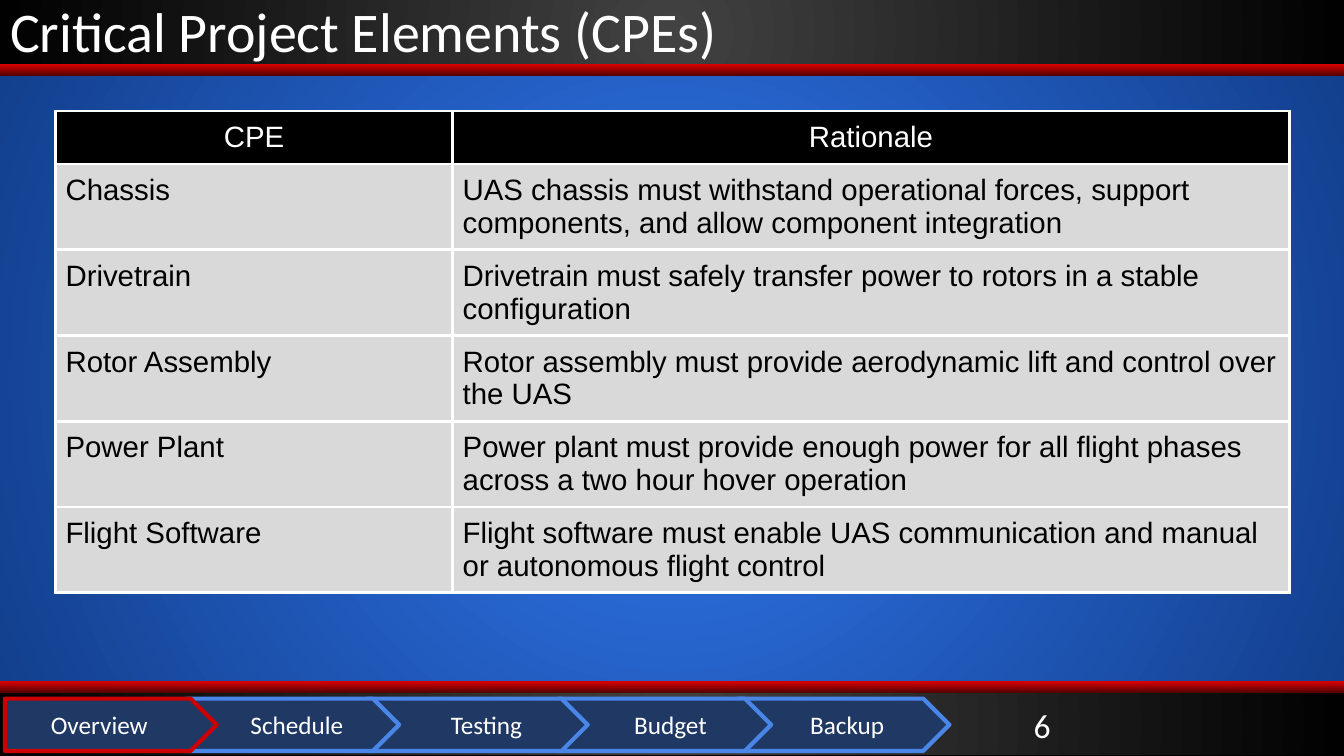
from lxml import etree
from pptx import Presentation
from pptx.dml.color import RGBColor
from pptx.enum import shapes, text
from pptx.oxml import ns
from pptx.util import Pt

TITLE = "Critical Project Elements (CPEs)"
SLIDE_NUMBER = "6"
ROWS = [
    ("CPE", "Rationale"),
    ("Chassis", "UAS chassis must withstand operational forces, support components, "
                "and allow component integration"),
    ("Drivetrain", "Drivetrain must safely transfer power to rotors in a stable configuration"),
    ("Rotor Assembly", "Rotor assembly must provide aerodynamic lift and control over the UAS"),
    ("Power Plant", "Power plant must provide enough power for all flight phases "
                    "across a two hour hover operation"),
    ("Flight Software", "Flight software must enable UAS communication and manual "
                        "or autonomous flight control"),
]
# label, left, width, left inset
SECTIONS = [
    ("Overview", 3.6, 151.2, 0),
    ("Schedule", 133.9, 151.2, 21.6),
    ("Testing", 262.8, 157, 28.8),
    ("Budget", 399.6, 151.2, 24),
    ("Backup", 527, 151.2, 21.6),
]
CURRENT_SECTION = "Overview"

WHITE = RGBColor(0xFF, 0xFF, 0xFF)
BLACK = RGBColor(0, 0, 0)
CELL_GRAY = RGBColor(0xD9, 0xD9, 0xD9)
SKY = RGBColor(0x31, 0x77, 0xEE)
DEEP_BLUE = RGBColor(0x11, 0x3D, 0x8A)
CHARCOAL = RGBColor(0x42, 0x42, 0x42)
NEAR_BLACK = RGBColor(1, 1, 1)
RED = RGBColor(0xDB, 0, 0)
DARK_RED = RGBColor(0x54, 3, 3)
NAVY = RGBColor(0x1F, 0x38, 0x64)
TAB_BLUE = RGBColor(0x4A, 0x86, 0xE8)
TAB_RED = RGBColor(0xCC, 0, 0)

WIDTH, HEIGHT = 960, 540
BAND_HEIGHT, STRIPE_HEIGHT = 46, 8
FOOTER_TOP = HEIGHT - BAND_HEIGHT
TAB_TOP, TAB_HEIGHT = 499, 37.4
TABLE_LEFT, TABLE_TOP = 39.6, 79.2
COLUMN_WIDTHS = (283.7, 597.6)
HEADER_ROW, BODY_ROW = 38, 61


def set_gradient(fill, element, start, end, radial):
    """Fill with two colours, from the centre outwards or from top to bottom."""
    fill.gradient()
    for stop, color in zip(fill.gradient_stops, (start, end)):
        stop.color.rgb = color
    fill.gradient_angle = 270
    if radial:
        linear = element.find(".//" + ns.qn("a:lin"))
        circle = etree.Element(ns.qn("a:path"), path="circle")
        etree.SubElement(circle, ns.qn("a:fillToRect"),
                         dict.fromkeys("ltrb", "50000"))
        linear.getparent().replace(linear, circle)


def add_band(slide, top, height, start, end, radial):
    band = slide.shapes.add_shape(shapes.MSO_SHAPE.RECTANGLE,
                                  Pt(0), Pt(top), Pt(WIDTH), Pt(height))
    band.shadow.inherit = False
    band.line.fill.background()
    set_gradient(band.fill, band.element, start, end, radial)
    return band


def write(frame, words, size, font, color, alignment):
    paragraph = frame.paragraphs[0]
    paragraph.alignment = alignment
    run = paragraph.add_run()
    run.text = words
    run.font.size = Pt(size)
    run.font.name = font
    run.font.color.rgb = color
    return paragraph


def set_up_frame(frame, left=7.2):
    frame.word_wrap = True
    frame.auto_size = text.MSO_AUTO_SIZE.NONE
    frame.vertical_anchor = text.MSO_ANCHOR.MIDDLE
    frame.margin_left, frame.margin_right = Pt(left), Pt(7.2)
    frame.margin_top = frame.margin_bottom = Pt(3.6)


def add_section_tab(slide, label, left, width, inset):
    tab = slide.shapes.add_shape(shapes.MSO_SHAPE.PENTAGON,
                                 Pt(left), Pt(TAB_TOP), Pt(width), Pt(TAB_HEIGHT))
    tab.shadow.inherit = False
    tab.fill.solid()
    tab.fill.fore_color.rgb = NAVY
    tab.line.color.rgb = TAB_RED if label == CURRENT_SECTION else TAB_BLUE
    tab.line.width = Pt(3)
    set_up_frame(tab.text_frame, inset)
    write(tab.text_frame, label, 18, "Calibri", WHITE, text.PP_ALIGN.CENTER)


def add_borders(cell):
    properties = cell._tc.get_or_add_tcPr()
    for position, side in enumerate(("lnL", "lnR", "lnT", "lnB")):
        border = etree.Element(ns.qn("a:" + side), w=str(Pt(2.25)))
        fill = etree.SubElement(border, ns.qn("a:solidFill"))
        etree.SubElement(fill, ns.qn("a:srgbClr"), val=str(WHITE))
        properties.insert(position, border)


def add_cpe_table(slide):
    table_height = HEADER_ROW + BODY_ROW * (len(ROWS) - 1)
    table = slide.shapes.add_table(len(ROWS), len(COLUMN_WIDTHS), Pt(TABLE_LEFT), Pt(TABLE_TOP),
                                   Pt(sum(COLUMN_WIDTHS)), Pt(table_height)).table
    table.first_row = table.horz_banding = False
    for column, width in zip(table.columns, COLUMN_WIDTHS):
        column.width = Pt(width)
    for row_index, row in enumerate(ROWS):
        header = row_index == 0
        table.rows[row_index].height = Pt(HEADER_ROW if header else BODY_ROW)
        for column_index, words in enumerate(row):
            cell = table.cell(row_index, column_index)
            cell.margin_left = cell.margin_right = Pt(7.2)
            cell.margin_top = cell.margin_bottom = Pt(7.2)
            cell.fill.solid()
            cell.fill.fore_color.rgb = BLACK if header else CELL_GRAY
            add_borders(cell)
            write(cell.text_frame, words, 21, "Arial", WHITE if header else BLACK,
                  text.PP_ALIGN.CENTER if header else text.PP_ALIGN.LEFT)


def main():
    presentation = Presentation()
    presentation.slide_width, presentation.slide_height = Pt(WIDTH), Pt(HEIGHT)
    slide = presentation.slides.add_slide(presentation.slide_layouts[5])
    set_gradient(slide.background.fill, slide.element, SKY, DEEP_BLUE, True)

    footer = add_band(slide, FOOTER_TOP, BAND_HEIGHT, CHARCOAL, NEAR_BLACK, True)
    footer.line.color.rgb = BLACK
    footer.line.width = Pt(1)
    add_band(slide, 0, BAND_HEIGHT, CHARCOAL, NEAR_BLACK, True)
    for top in (BAND_HEIGHT, FOOTER_TOP - STRIPE_HEIGHT + 0.7):
        add_band(slide, top, STRIPE_HEIGHT, RED, DARK_RED, False)

    for section in reversed(SECTIONS):
        add_section_tab(slide, *section)

    number = slide.shapes.add_textbox(Pt(697), Pt(503.3), Pt(60.5), Pt(28.8))
    set_up_frame(number.text_frame)
    write(number.text_frame, SLIDE_NUMBER, 24, "Calibri", WHITE, text.PP_ALIGN.RIGHT)

    title = slide.shapes.title
    title.left, title.top, title.width, title.height = Pt(0), Pt(-5.8), Pt(828), Pt(60.5)
    set_up_frame(title.text_frame)
    heading = write(title.text_frame, TITLE, 40, "Calibri", WHITE, text.PP_ALIGN.LEFT)
    heading.line_spacing = 0.9
    title.element.getparent().append(title.element)  # in front of the header band

    add_cpe_table(slide)
    presentation.save("out.pptx")


if __name__ == "__main__":
    main()
